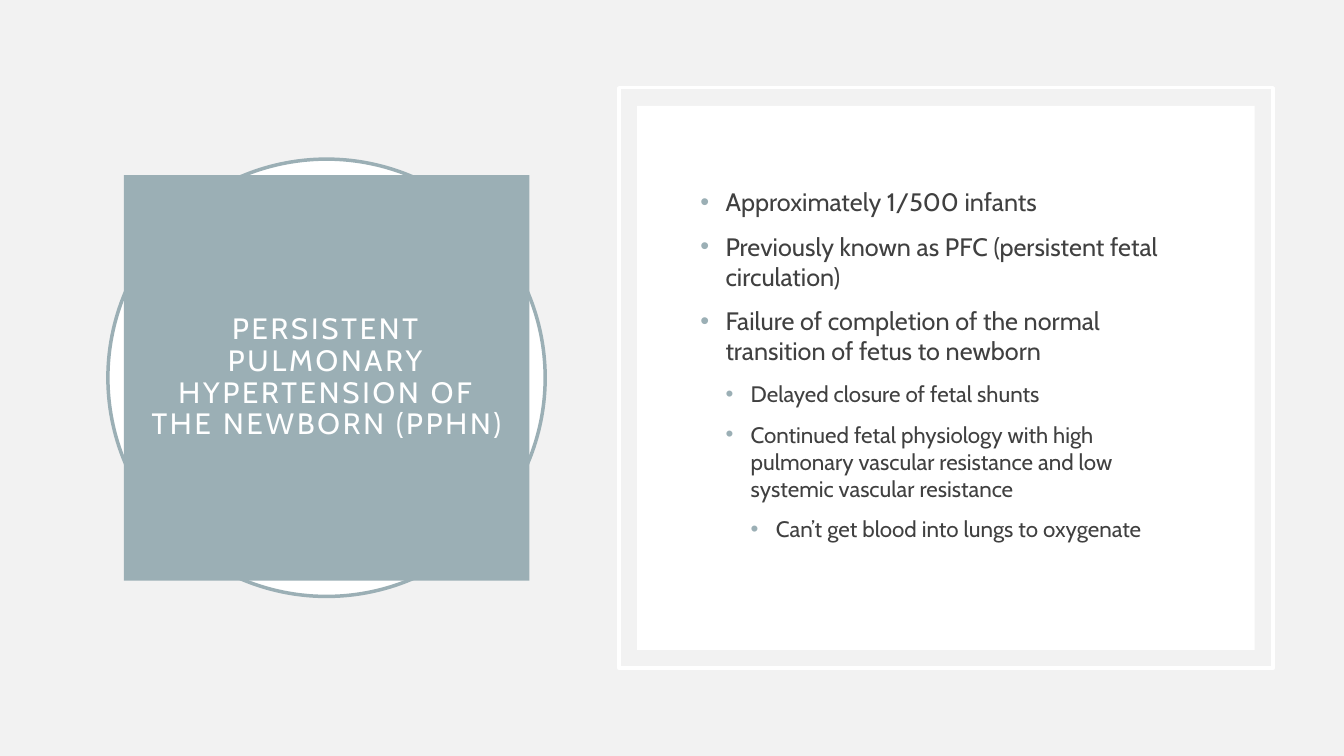
from dataclasses import dataclass

from lxml import etree
from pptx import Presentation
from pptx.dml.color import RGBColor
from pptx.enum.shapes import MSO_SHAPE
from pptx.enum.text import MSO_ANCHOR, MSO_AUTO_SIZE, PP_ALIGN
from pptx.oxml.ns import qn
from pptx.util import Cm, Pt

OVAL, RECTANGLE = MSO_SHAPE.OVAL, MSO_SHAPE.RECTANGLE
MIDDLE, CENTER = MSO_ANCHOR.MIDDLE, PP_ALIGN.CENTER
NO_AUTOFIT = MSO_AUTO_SIZE.NONE
TITLE_ONLY = 5


@dataclass(frozen=True)
class Theme:
    background: RGBColor = RGBColor(0xF2, 0xF2, 0xF2)
    accent: RGBColor = RGBColor(0x9B, 0xAF, 0xB5)
    white: RGBColor = RGBColor(0xFF, 0xFF, 0xFF)
    ink: RGBColor = RGBColor(0x40, 0x40, 0x40)
    font: str = "Cabin"
    title_size: Pt = Pt(21)
    level_sizes: tuple = (Pt(18), Pt(16), Pt(16))
    line_width: Pt = Pt(2.5)


@dataclass(frozen=True)
class Box:
    left: float
    top: float
    width: float
    height: float

    def inset(self, gap):
        return Box(self.left + gap, self.top + gap,
                   self.width - 2 * gap, self.height - 2 * gap)

    def lengths(self):
        return Cm(self.left), Cm(self.top), Cm(self.width), Cm(self.height)


THEME = Theme()
TITLE = "PERSISTENT PULMONARY HYPERTENSION OF THE NEWBORN (PPHN)"
POINTS = (
    (0, "Approximately 1/500 infants"),
    (0, "Previously known as PFC (persistent fetal circulation)"),
    (0, "Failure of completion of the normal transition of fetus to newborn"),
    (1, "Delayed closure of fetal shunts"),
    (1, "Continued fetal physiology with high pulmonary vascular resistance "
        "and low systemic vascular resistance"),
    (2, "Can’t get blood into lungs to oxygenate"),
)


def add_plain_shape(page, kind, box, fill=None, line=None):
    shape = page.shapes.add_shape(kind, *box.lengths())
    shape.shadow.inherit = False
    if fill is None:
        shape.fill.background()
    else:
        shape.fill.solid()
        shape.fill.fore_color.rgb = fill
    if line is None:
        shape.line.fill.background()
    else:
        shape.line.color.rgb = line
        shape.line.width = THEME.line_width


def set_font(para, size, color):
    para.font.name = THEME.font
    para.font.size = size
    para.font.color.rgb = color


def add_bullet(para, level):
    indent = Cm(0.635)
    properties = para._p.get_or_add_pPr()
    properties.set("marL", str(indent * (level + 1)))
    properties.set("indent", str(-indent))
    color = etree.SubElement(properties, qn("a:buClr"))
    etree.SubElement(color, qn("a:srgbClr"), val=str(THEME.accent))
    etree.SubElement(properties, qn("a:buFont"), typeface="Arial")
    etree.SubElement(properties, qn("a:buChar"), char="•")


def build_title(page, box):
    add_plain_shape(page, OVAL, box, THEME.white, THEME.accent)
    title = page.shapes.title
    page.shapes._spTree.append(title._element)
    title.left, title.top, title.width, title.height = box.inset(0.4).lengths()
    title.fill.solid()
    title.fill.fore_color.rgb = THEME.accent
    frame = title.text_frame
    frame.text = TITLE
    frame.word_wrap = True
    frame.auto_size = NO_AUTOFIT
    frame.vertical_anchor = MIDDLE
    frame.margin_left = frame.margin_right = Cm(0.5)
    frame.margin_top = frame.margin_bottom = Cm(0.5)
    para = frame.paragraphs[0]
    para.alignment = CENTER
    para.line_spacing = 0.9
    set_font(para, THEME.title_size, THEME.white)
    para.runs[0]._r.get_or_add_rPr().set("spc", "200")


def build_points(page, box):
    add_plain_shape(page, RECTANGLE, box, line=THEME.white)
    add_plain_shape(page, RECTANGLE, box.inset(0.46), THEME.white)
    body = page.shapes.add_textbox(*box.inset(1.8).lengths())
    frame = body.text_frame
    frame.word_wrap = True
    frame.vertical_anchor = MIDDLE
    frame.margin_bottom = Cm(0.8)
    for index, (level, text) in enumerate(POINTS):
        para = frame.add_paragraph() if index else frame.paragraphs[0]
        para.text = text
        para.level = level
        if index:
            para.space_before = Pt(10)
        add_bullet(para, level)
        set_font(para, THEME.level_sizes[level], THEME.ink)


def main():
    deck = Presentation()
    deck.slide_width, deck.slide_height = Cm(33.87), Cm(19.05)
    page = deck.slides.add_slide(deck.slide_layouts[TITLE_ONLY])
    page.background.fill.solid()
    page.background.fill.fore_color.rgb = THEME.background
    build_title(page, Box(2.72, 4.01, 11.02, 11.02))
    build_points(page, Box(15.6, 2.21, 16.48, 14.63))
    deck.save("out.pptx")


if __name__ == "__main__":
    main()
